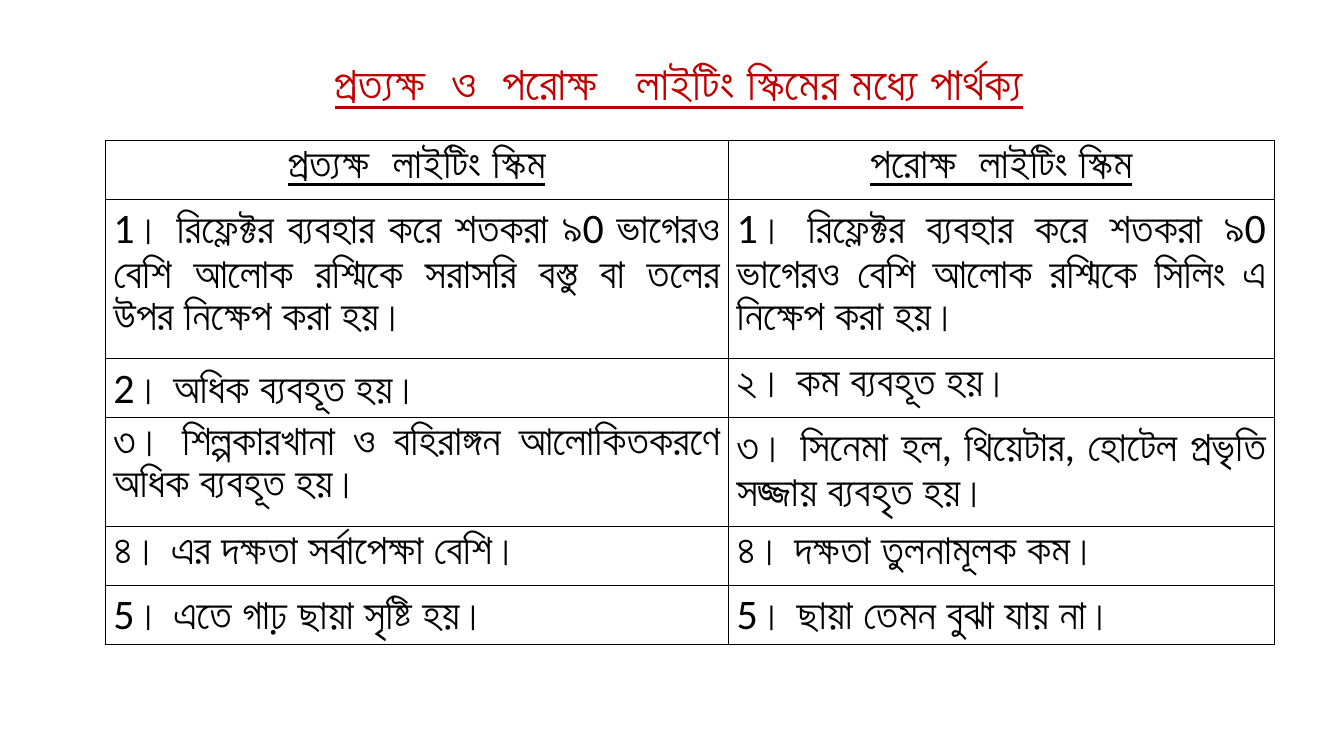
from pptx import Presentation
from pptx.dml.color import RGBColor
from pptx.enum import text
from pptx.oxml import parse_xml
from pptx.oxml.ns import nsdecls
from pptx.util import Inches, Pt

THEME = {
    "font": "Calibri",
    "title_size": 40,
    "cell_size": 36,
    "title": "C00000",
    "ink": "000000",
    "line_width": 1,
}

TITLE = "প্রত্যক্ষ  ও  পরোক্ষ   লাইটিং স্কিমের মধ্যে পার্থক্য"
ROWS = [
    ("প্রত্যক্ষ  লাইটিং স্কিম", "পরোক্ষ  লাইটিং স্কিম"),
    ("1। রিফ্লেক্টর ব্যবহার করে শতকরা ৯0 ভাগেরও বেশি আলোক রশ্মিকে সরাসরি বস্তু বা তলের উপর নিক্ষেপ করা হয়।",
     "1। রিফ্লেক্টর ব্যবহার করে শতকরা ৯0 ভাগেরও বেশি আলোক রশ্মিকে সিলিং এ নিক্ষেপ করা হয়।"),
    ("2। অধিক ব্যবহূত হয়।", "২। কম ব্যবহূত হয়।"),
    ("৩। শিল্পকারখানা ও বহিরাঙ্গন আলোকিতকরণে অধিক ব্যবহূত হয়।",
     "৩। সিনেমা হল, থিয়েটার, হোটেল প্রভৃতি সজ্জায় ব্যবহৃত হয়।"),
    ("৪। এর দক্ষতা সর্বাপেক্ষা বেশি।", "৪। দক্ষতা তুলনামূলক কম। "),
    ("5। এতে গাঢ় ছায়া সৃষ্টি হয়।", "5। ছায়া তেমন বুঝা যায় না।"),
]
COLUMN_WIDTHS = [7.42, 6.5]
ROW_HEIGHTS = [0.7, 1.9, 0.7, 1.3, 0.7, 0.7]


def write(tf, words, size, color, align, heading):
    tf.text = words
    p = tf.paragraphs[0]
    p.alignment = align
    font = p.runs[0].font
    font.name = THEME["font"]
    font.size = Pt(size)
    font.bold = heading
    font.underline = heading
    font.color.rgb = RGBColor.from_string(color)


def add_borders(cell):
    tcPr = cell._tc.get_or_add_tcPr()
    for i, side in enumerate(("lnL", "lnR", "lnT", "lnB")):
        tcPr.insert(i, parse_xml(
            f'<a:{side} {nsdecls("a")} w="{Pt(THEME["line_width"])}">'
            f'<a:solidFill><a:srgbClr val="{THEME["ink"]}"/></a:solidFill></a:{side}>'))


prs = Presentation()
prs.slide_width = Inches(16)
prs.slide_height = Inches(9)
s = prs.slides.add_slide(prs.slide_layouts[6])

title = s.shapes.add_textbox(Inches(1.83), Inches(0.59), Inches(12.5), Inches(0.77))
title.text_frame.word_wrap = True
write(title.text_frame, TITLE, THEME["title_size"], THEME["title"], text.PP_ALIGN.CENTER, True)

table = s.shapes.add_table(
    len(ROWS), len(COLUMN_WIDTHS), Inches(1.25), Inches(1.67),
    Inches(sum(COLUMN_WIDTHS)), Inches(sum(ROW_HEIGHTS))).table
table.first_row = False
table.horz_banding = False
for column, width in zip(table.columns, COLUMN_WIDTHS):
    column.width = Inches(width)
for row, height in zip(table.rows, ROW_HEIGHTS):
    row.height = Inches(height)

for i, row in enumerate(ROWS):
    heading = i == 0
    align = text.PP_ALIGN.CENTER if heading else text.PP_ALIGN.JUSTIFY
    for j, words in enumerate(row):
        cell = table.cell(i, j)
        cell.fill.background()
        add_borders(cell)
        write(cell.text_frame, words, THEME["cell_size"], THEME["ink"], align, heading)

prs.save("out.pptx")
